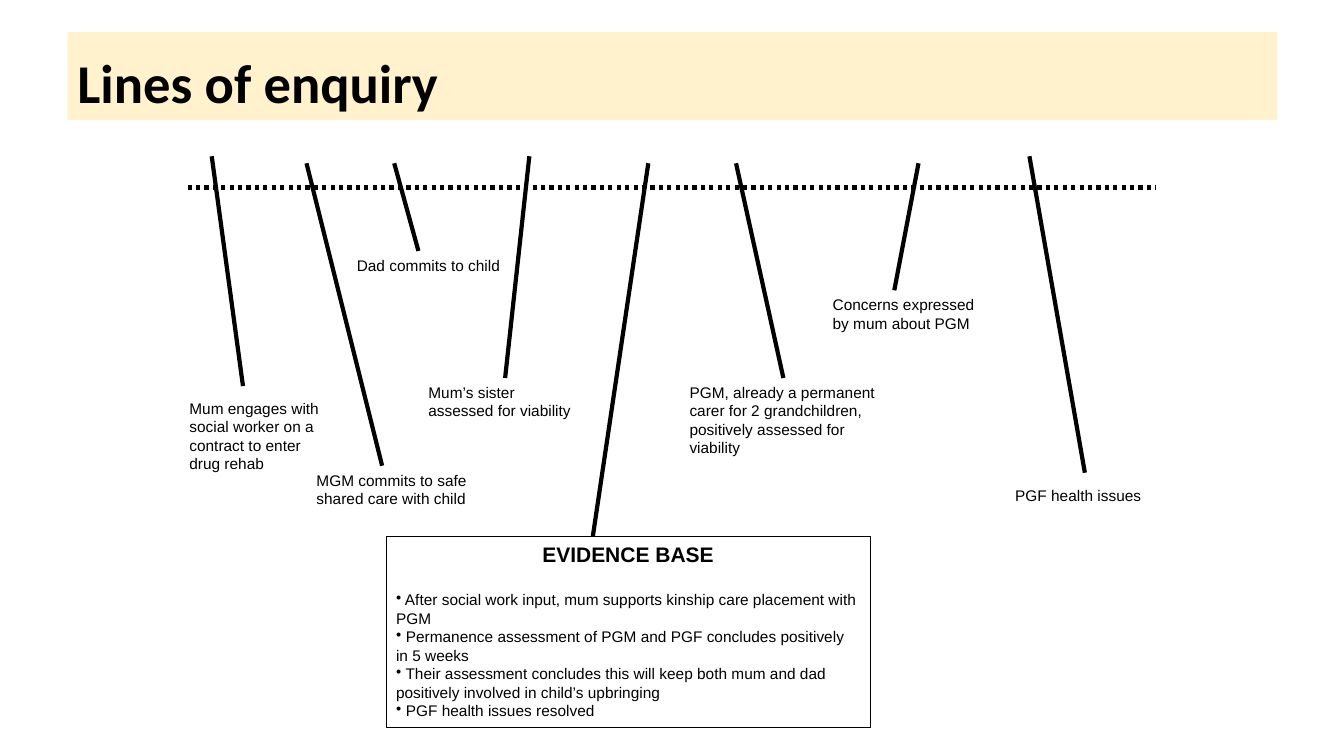
import pptx
import pptx.util
import pptx.dml.color
import pptx.enum.dml
import pptx.enum.shapes
import pptx.enum.text
import pptx.oxml.ns
import lxml.etree

PX = 9144  # EMU in one px, 100 px to the inch
BLACK = "000000"
CREAM = "FFF2CC"
ALIGN = pptx.enum.text.PP_ALIGN
ANCHOR = pptx.enum.text.MSO_ANCHOR

# Each enquiry: line from, line to, label box, label text
ENQUIRIES = [
    ((210, 155), (241, 383), (178, 391, 157, 84),
     "Mum engages with social worker on a contract to enter drug rehab"),
    ((304, 162), (379, 462), (304, 462, 173, 79),
     "MGM commits to safe shared care with child"),
    ((391, 162), (415, 249), (344, 249, 165, 61), "Dad commits to child"),
    ((525, 155), (501, 375), (415, 375, 165, 66),
     "Mum’s sister assessed for viability"),
    ((730, 162), (777, 375), (674, 375, 228, 98),
     "PGM, already a permanent carer for 2 grandchildren, "
     "positively assessed for viability"),
    ((911, 162), (887, 288), (816, 288, 165, 79),
     "Concerns expressed by mum about PGM"),
    ((1021, 155), (1076, 469), (997, 477, 169, 47), "PGF health issues"),
]
EVIDENCE = [
    "After social work input, mum supports kinship care placement with PGM",
    "Permanence assessment of PGM and PGF concludes positively in 5 weeks",
    "Their assessment concludes this will keep both mum and dad "
    "positively involved in child’s upbringing",
    "PGF health issues resolved",
]


def colour(code):
    return pptx.dml.color.RGBColor.from_string(code)


def emu(*sizes):
    return [pptx.util.Emu(size * PX) for size in sizes]


class Board:
    """Holds the style and the current slide."""

    face = "Arial"
    small = 11
    thick = 3

    def __init__(self, wide, high):
        self.deck = pptx.Presentation()
        self.deck.slide_width, self.deck.slide_height = emu(wide, high)
        self.slide = self.deck.slides.add_slide(self.deck.slide_layouts[6])

    def line(self, start, end, dash=None):
        link = self.slide.shapes.add_connector(
            pptx.enum.shapes.MSO_CONNECTOR.STRAIGHT, *emu(*start, *end))
        link.line.color.rgb = colour(BLACK)
        link.line.width = pptx.util.Pt(self.thick)
        if dash:
            link.line.dash_style = dash
        props = link._element.spPr
        lxml.etree.SubElement(props, pptx.oxml.ns.qn("a:effectLst"))

    def box(self, place, fill=None, edge=None, anchor=ANCHOR.TOP):
        shape = self.slide.shapes.add_shape(
            pptx.enum.shapes.MSO_SHAPE.RECTANGLE, *emu(*place))
        shape.shadow.inherit = False
        if fill:
            shape.fill.solid()
            shape.fill.fore_color.rgb = colour(fill)
        else:
            shape.fill.background()
        if edge:
            shape.line.color.rgb = colour(BLACK)
            shape.line.width = pptx.util.Pt(edge)
        else:
            shape.line.fill.background()
        shape.text_frame.vertical_anchor = anchor
        return shape.text_frame

    def label(self, place, words):
        frame = self.slide.shapes.add_textbox(*emu(*place)).text_frame
        frame.word_wrap = True
        self.letter(frame.paragraphs[0], words)

    def letter(self, para, words, size=small, face=face, bold=False,
               align=ALIGN.LEFT):
        para.text = words
        para.alignment = align
        font = para.font
        font.name, font.size, font.bold = face, pptx.util.Pt(size), bold
        font.color.rgb = colour(BLACK)

    def bullet(self, frame, words):
        para = frame.add_paragraph()
        self.letter(para, " " + words)
        props = para._p.get_or_add_pPr()
        props.set("marL", "0")
        props.set("indent", "0")
        mark = lxml.etree.Element(pptx.oxml.ns.qn("a:buChar"), char="•")
        props.insert(0, mark)  # ahead of the font settings


def main():
    board = Board(1333, 750)

    # Title band
    band = board.box((67, 32, 1200, 87), fill=CREAM, anchor=ANCHOR.BOTTOM)
    title = band.paragraphs[0]
    board.letter(title, "Lines of enquiry", 39, "Calibri", True)
    title.line_spacing = 0.9

    # Timeline, and the enquiries hanging from it
    board.line((186, 186), (1147, 186),
               pptx.enum.dml.MSO_LINE.ROUND_DOT)
    for start, end, place, words in ENQUIRIES:
        board.line(start, end)
        board.label(place, words)

    # Evidence box
    board.line((643, 162), (588, 532))
    frame = board.box((383, 532, 480, 190), edge=0.75)
    head = frame.paragraphs[0]
    board.letter(head, "EVIDENCE BASE", 15, bold=True, align=ALIGN.CENTER)
    head.space_after = pptx.util.Pt(17)
    for words in EVIDENCE:
        board.bullet(frame, words)

    board.deck.save("out.pptx")


if __name__ == "__main__":
    main()
